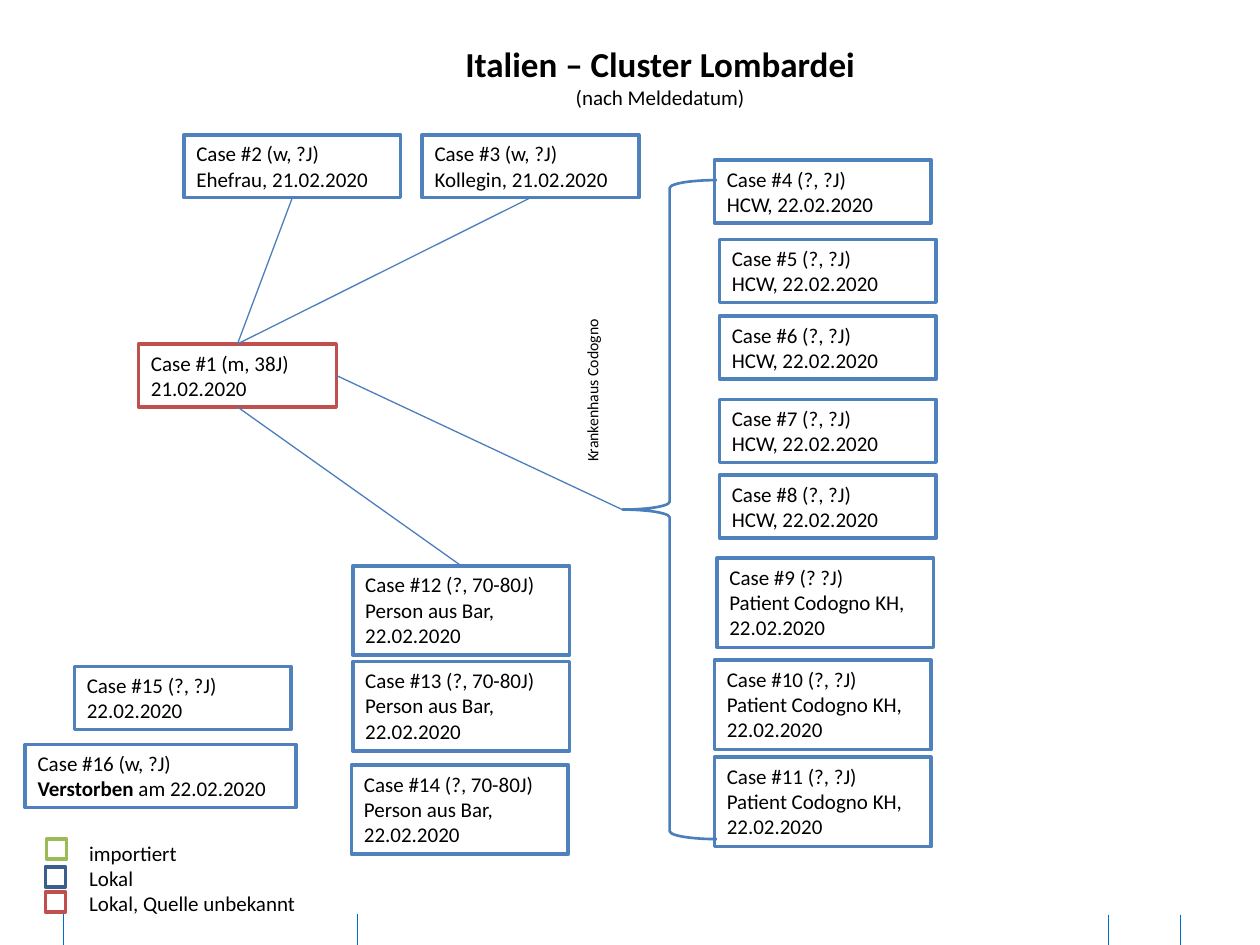
"""Build the slide on the Lombardy case cluster."""
import pptx
import pptx.util
import pptx.dml.color
import pptx.enum.shapes
import pptx.enum.text
import lxml.etree

Inches = pptx.util.Inches
Pt = pptx.util.Pt
RGBColor = pptx.dml.color.RGBColor
SHAPE = pptx.enum.shapes.MSO_SHAPE
ALIGN = pptx.enum.text.PP_ALIGN

BLACK = RGBColor(0x00, 0x00, 0x00)
WHITE = RGBColor(0xFF, 0xFF, 0xFF)
BLUE = RGBColor(0x4F, 0x81, 0xBD)
LINK_BLUE = RGBColor(0x4B, 0x7E, 0xBC)
DARK_BLUE = RGBColor(0x3A, 0x5F, 0x8C)
TICK_BLUE = RGBColor(0x00, 0x6E, 0xC7)
RED = RGBColor(0xC0, 0x50, 0x4D)
GREEN = RGBColor(0x9B, 0xBB, 0x59)
DRAWING_NS = "http://schemas.openxmlformats.org/drawingml/2006/main"


def write(p, text, size=12, bold=False, align=ALIGN.LEFT):
    p.alignment = align
    r = p.add_run()
    r.text = text
    r.font.name = "Calibri"
    r.font.size = Pt(size)
    r.font.bold = bold
    r.font.color.rgb = BLACK


def add_line(x1, y1, x2, y2, color, width):
    line = s.shapes.add_connector(
        pptx.enum.shapes.MSO_CONNECTOR.STRAIGHT,
        Inches(x1), Inches(y1), Inches(x2), Inches(y2))
    line.line.color.rgb = color
    line.line.width = Pt(width)
    lxml.etree.SubElement(line._element.spPr, f"{{{DRAWING_NS}}}effectLst")
    return line


prs = pptx.Presentation()
prs.slide_width = Inches(10)
prs.slide_height = Inches(7.5)
s = prs.slides.add_slide(prs.slide_layouts[6])

for x, y in [(2.84, 7.25), (0.5, 7.24), (9.37, 7.26), (8.8, 7.26)]:
    add_line(x, y, x, 7.5, TICK_BLUE, 0.5)

HCW = "HCW, 22.02.2020"
PATIENT = "Patient Codogno KH, 22.02.2020"
BAR = "Person aus Bar, 22.02.2020"
cases = [
    (1, "(m, 38J)", "21.02.2020", 1.1, 2.73, 1.57, 0.5),
    (2, "(w, ?J)", "Ehefrau, 21.02.2020", 1.46, 1.07, 1.72, 0.5),
    (3, "(w, ?J)", "Kollegin, 21.02.2020", 3.35, 1.07, 1.72, 0.5),
    (4, "(?, ?J)", HCW, 5.67, 1.27, 1.72, 0.5),
    (5, "(?, ?J)", HCW, 5.71, 1.9, 1.72, 0.5),
    (6, "(?, ?J)", HCW, 5.71, 2.51, 1.72, 0.5),
    (7, "(?, ?J)", HCW, 5.71, 3.17, 1.72, 0.5),
    (8, "(?, ?J)", HCW, 5.71, 3.77, 1.72, 0.5),
    (9, "(? ?J)", PATIENT, 5.69, 4.43, 1.72, 0.71),
    (10, "(?, ?J)", PATIENT, 5.67, 5.24, 1.72, 0.71),
    (11, "(?, ?J)", PATIENT, 5.67, 6.01, 1.72, 0.71),
    (12, "(?, 70-80J)", BAR, 2.8, 4.49, 1.72, 0.71),
    (13, "(?, 70-80J)", BAR, 2.8, 5.25, 1.72, 0.71),
    (14, "(?, 70-80J)", BAR, 2.79, 6.07, 1.72, 0.71),
    (15, "(?, ?J)", "22.02.2020", 0.59, 5.29, 1.72, 0.5),
    (16, "(w, ?J)", " am 22.02.2020", 0.2, 5.91, 2.15, 0.5),
]
boxes = {}
for number, person, detail, x, y, w, h in cases:
    sp = s.shapes.add_shape(SHAPE.RECTANGLE, Inches(x), Inches(y), Inches(w), Inches(h))
    sp.shadow.inherit = False
    sp.fill.solid()
    sp.fill.fore_color.rgb = WHITE
    sp.line.color.rgb = RED if number == 1 else BLUE
    sp.line.width = Pt(2)
    tf = sp.text_frame
    tf.word_wrap = True
    tf.auto_size = pptx.enum.text.MSO_AUTO_SIZE.SHAPE_TO_FIT_TEXT
    tf.vertical_anchor = pptx.enum.text.MSO_ANCHOR.TOP
    write(tf.paragraphs[0], f"Case #{number} {person}")
    p = tf.add_paragraph()
    if number == 16:
        write(p, "Verstorben", bold=True)
    write(p, detail)
    boxes[number] = sp

brace = s.shapes.add_shape(
    SHAPE.LEFT_BRACE, Inches(4.94), Inches(1.43), Inches(0.75), Inches(5.23))
brace.shadow.inherit = False
brace.fill.background()
brace.line.color.rgb = LINK_BLUE
brace.line.width = Pt(1.5)

for start_side, target, end_side in [
        (0, boxes[2], 2), (0, boxes[3], 2), (3, brace, 1), (2, boxes[12], 0)]:
    link = add_line(0, 0, 1, 1, LINK_BLUE, 0.75)
    link.begin_connect(boxes[1], start_side)
    link.end_connect(target, end_side)

for x, y, color in [(0.37, 6.66, GREEN), (0.36, 6.88, DARK_BLUE), (0.36, 7.08, RED)]:
    sp = s.shapes.add_shape(
        SHAPE.RECTANGLE, Inches(x), Inches(y), Inches(0.16), Inches(0.16))
    sp.shadow.inherit = False
    sp.fill.solid()
    sp.fill.fore_color.rgb = WHITE
    sp.line.color.rgb = color
    sp.line.width = Pt(2)

title = [("Italien – Cluster Lombardei", {"size": 20, "bold": True, "align": ALIGN.CENTER}),
         ("(nach Meldedatum)", {"align": ALIGN.CENTER})]
legend = [(text, {}) for text in ("importiert", "Lokal", "Lokal, Quelle unbekannt")]
hospital = [("Krankenhaus Codogno", {"size": 9})]
for x, y, w, h, rotation, lines in [
        (2.01, 0.29, 6.46, 0.64, 0, title),
        (0.61, 6.62, 2.07, 0.71, 0, legend),
        (3.96, 2.9, 1.48, 0.25, 270, hospital)]:
    sp = s.shapes.add_textbox(Inches(x), Inches(y), Inches(w), Inches(h))
    sp.rotation = rotation
    tf = sp.text_frame
    tf.word_wrap = True
    tf.auto_size = pptx.enum.text.MSO_AUTO_SIZE.SHAPE_TO_FIT_TEXT
    for i, (text, style) in enumerate(lines):
        p = tf.add_paragraph() if i else tf.paragraphs[0]
        write(p, text, **style)

prs.save("out.pptx")
